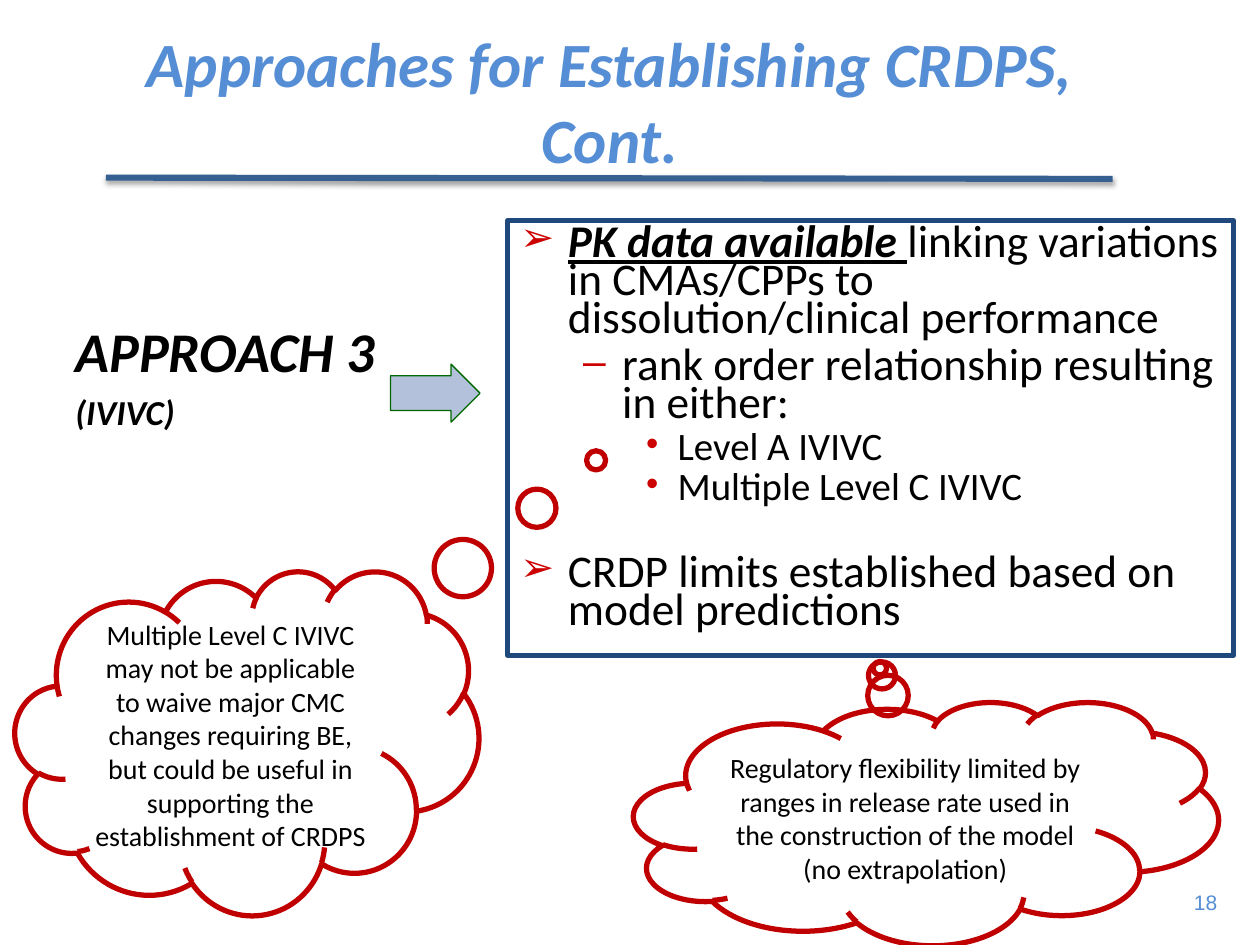
import pptx
import pptx.util
import pptx.dml.color
import pptx.enum.shapes
import pptx.enum.text
import pptx.oxml
import pptx.oxml.ns

Inches, Pt = pptx.util.Inches, pptx.util.Pt
KIND = pptx.enum.shapes.MSO_SHAPE
ALIGN = pptx.enum.text.PP_ALIGN
ANCHOR = pptx.enum.text.MSO_ANCHOR
NS = pptx.oxml.ns.nsdecls("a")


def write(par, text, color="000000", **form):
    """Add a run to a paragraph, formatted from the given font values."""
    run = par.add_run()
    run.text = text
    run.font.color.rgb = pptx.dml.color.RGBColor.from_string(color)
    for name, value in {"name": "Calibri", **form}.items():
        setattr(run.font, name, value)


def draw(kind, box, line, width, fill=None):
    """Add a preset shape with a plain outline and optional fill."""
    shape = slide.shapes.add_shape(kind, *map(Inches, box))
    shape.shadow.inherit = False
    shape.line.color.rgb = pptx.dml.color.RGBColor.from_string(line)
    shape.line.width = Pt(width)
    if fill:
        shape.fill.solid()
        shape.fill.fore_color.rgb = pptx.dml.color.RGBColor.from_string(fill)
    else:
        shape.fill.background()
    return shape


deck = pptx.Presentation()
deck.slide_width, deck.slide_height = Inches(10), Inches(7.5)
slide = deck.slides.add_slide(deck.slide_layouts[5])

# Title
title = slide.shapes.title
title.left, title.top, title.width, title.height = map(Inches, (0.34, 0.17, 9, 1.25))
frame = title.text_frame
frame.auto_size = pptx.enum.text.MSO_AUTO_SIZE.NONE
frame.vertical_anchor = ANCHOR.MIDDLE
for i, text in enumerate(["Approaches for Establishing CRDPS,", "Cont."]):
    par = frame.add_paragraph() if i else frame.paragraphs[0]
    par.alignment = ALIGN.CENTER
    write(par, text, "558ED5", size=Pt(36), bold=True, italic=True)

# Approach label
label = slide.shapes.add_textbox(*map(Inches, (0.5, 2.46, 2.93, 0.89)))
frame = label.text_frame
frame.word_wrap = True
for i, (text, size) in enumerate([("APPROACH 3", 32), ("(IVIVC)", 20)]):
    par = frame.add_paragraph() if i else frame.paragraphs[0]
    if i:
        par.space_before = Pt(size * 0.2)
    write(par, text, size=Pt(size), bold=True, italic=True)

# Data box: level, indent, hang, bullet, size, space before, runs
plain = {"bold": False, "italic": False, "underline": False}
strong = {"bold": True, "italic": True, "underline": True}
points = [
    (0, 0.38, 0.38, "➢", 25.9, 0, [
        ("PK data available ", strong),
        ("linking variations in CMAs/CPPs to dissolution/clinical performance", plain)]),
    (1, 0.81, 0.31, "–", 25.9, 5.2, [("rank order relationship resulting in either:", plain)]),
    (2, 1.25, 0.25, "•", 22.2, 4.4, [("Level A IVIVC", plain)]),
    (2, 1.25, 0.25, "•", 22.2, 4.4, [("Multiple Level C IVIVC", plain)]),
    (0, 0.38, 0.38, "➢", 25.9, 28.6, [("CRDP limits established based on model predictions", plain)]),
]
panel = draw(KIND.RECTANGLE, (4.03, 1.75, 5.76, 3.45), "1F497D", 3)
frame = panel.text_frame
frame.word_wrap = True
frame.vertical_anchor = ANCHOR.TOP
for i, (level, indent, hang, mark, size, gap, runs) in enumerate(points):
    par = frame.add_paragraph() if i else frame.paragraphs[0]
    par.level = level
    par.alignment = ALIGN.LEFT
    par.line_spacing = 0.7
    if gap:
        par.space_before = Pt(gap)
    props = par._p.get_or_add_pPr()
    props.set("marL", str(Inches(indent)))
    props.set("indent", str(-Inches(hang)))
    for xml in (f'<a:buClr {NS}><a:srgbClr val="CC0000"/></a:buClr>',
                f'<a:buSzPct {NS} val="90000"/>',
                f'<a:buFont {NS} typeface="Arial"/>',
                f'<a:buChar {NS} char="{mark}"/>'):
        props.append(pptx.oxml.parse_xml(xml))
    for text, form in runs:
        write(par, text, size=Pt(size), **form)

# Arrow from the label to the box
arrow = draw(KIND.LEFT_ARROW, (3.1, 2.89, 0.71, 0.46), "006600", 0.75, "B3C1DB")
arrow.rotation = 180
arrow.adjustments[0], arrow.adjustments[1] = 0.6, 0.5

# Thought clouds
clouds = [
    ((5.03, 5.57, 4.64, 1.93), (-0.079, -0.638),
     "Regulatory flexibility limited by ranges in release rate used in "
     "the construction of the model (no extrapolation)"),
    ((0.12, 4.53, 3.68, 2.73), (0.753, -0.821),
     "Multiple Level C IVIVC may not be applicable to waive major CMC changes "
     "requiring BE, but could be useful in supporting the establishment of CRDPS"),
]
for box, tail, text in clouds:
    cloud = draw(KIND.CLOUD_CALLOUT, box, "C00000", 3)
    cloud.adjustments[0], cloud.adjustments[1] = tail
    frame = cloud.text_frame
    frame.word_wrap = True
    frame.vertical_anchor = ANCHOR.MIDDLE
    frame.paragraphs[0].alignment = ALIGN.CENTER
    write(frame.paragraphs[0], text, size=Pt(16))

# Rule under the title, with a soft shadow
rule = slide.shapes.add_connector(
    pptx.enum.shapes.MSO_CONNECTOR.STRAIGHT, *map(Inches, (0.84, 1.41, 8.83, 1.42)))
rule.line.color.rgb = pptx.dml.color.RGBColor.from_string("376092")
rule.line.width = Pt(3.5)
rule._element.spPr.append(pptx.oxml.parse_xml(
    f'<a:effectLst {NS}><a:outerShdw blurRad="{Pt(3.1)}" dist="{Pt(1.6)}" dir="5400000" '
    'rotWithShape="0"><a:srgbClr val="000000"><a:alpha val="38000"/></a:srgbClr>'
    '</a:outerShdw></a:effectLst>'))

# Page number
page = slide.shapes.add_textbox(*map(Inches, (9.35, 7.01, 0.41, 0.3)))
page.text_frame.word_wrap = False
par = page.text_frame.paragraphs[0]
par.alignment = ALIGN.RIGHT
write(par, "18", "558ED5", name="Arial", size=Pt(12))

deck.save("out.pptx")
